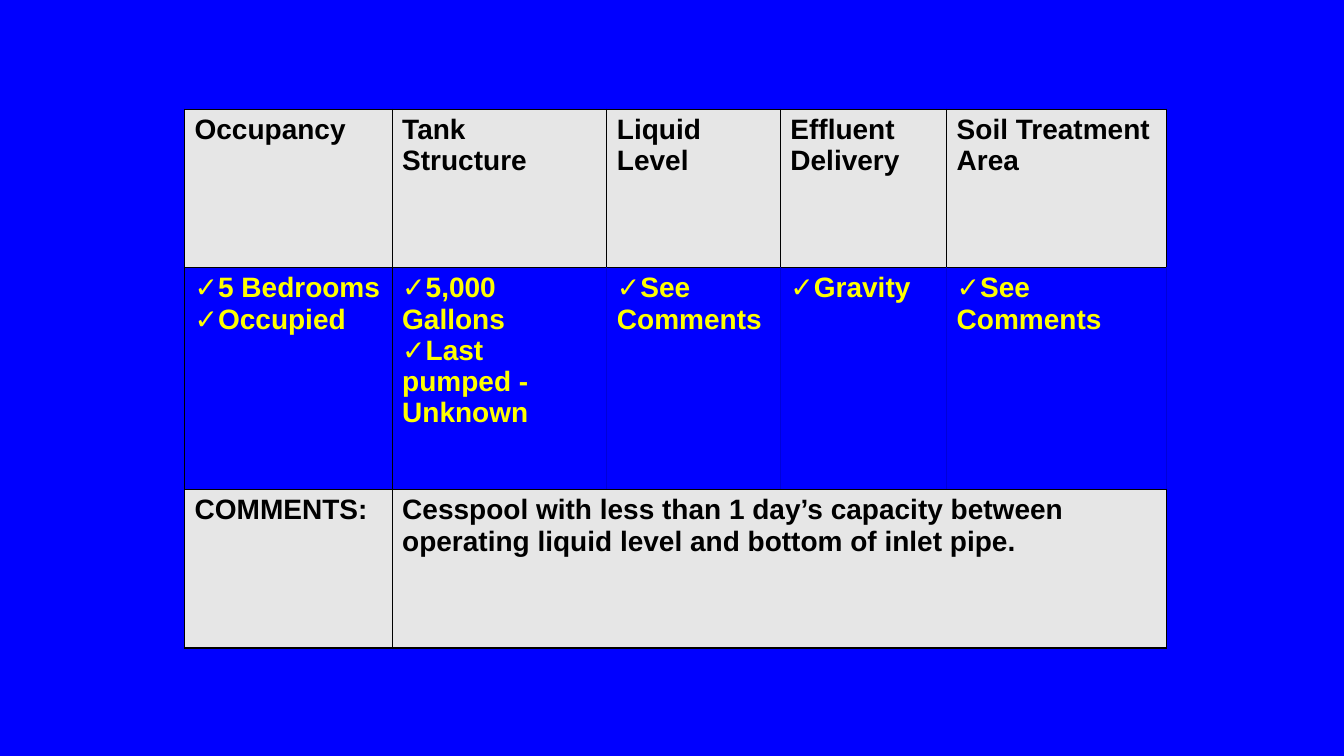
from lxml.etree import SubElement
from pptx import Presentation
from pptx.dml.color import RGBColor
from pptx.oxml.ns import qn
from pptx.util import Cm, Pt

COLORS = {"blue": "0000FF", "gray": "E6E6E6", "yellow": "FFFF00",
          "black": "000000", "faint": "0000D8"}
COLUMN_WIDTHS = [5.23, 5.41, 4.37, 4.19, 5.54]
ROW_HEIGHTS = [3.99, 5.59, 3.99]
FINDINGS_ROW = 1
INSPECTION = [
    [["Occupancy"], ["Tank Structure"], ["Liquid Level"],
     ["Effluent Delivery"], ["Soil Treatment Area"]],
    [["5 Bedrooms", "Occupied"], ["5,000 Gallons", "Last pumped - Unknown"],
     ["See Comments"], ["Gravity"], ["See Comments"]],
    [["COMMENTS:"],
     ["Cesspool with less than 1 day’s capacity between operating liquid "
      "level and bottom of inlet pipe."]],
]


def rgb(name):
    return RGBColor.from_string(COLORS[name])


def add_check_mark(paragraph):
    properties = paragraph._p.get_or_add_pPr()
    properties.set("marL", "0")
    properties.set("indent", "0")
    SubElement(properties, qn("a:buFont"), typeface="Arial")
    SubElement(properties, qn("a:buChar"), char="✓")
    tabs = SubElement(properties, qn("a:tabLst"))
    SubElement(tabs, qn("a:tab"), pos=str(Cm(0.64)), algn="l")


def set_borders(cell, side_colors):
    properties = cell._tc.get_or_add_tcPr()
    for side, color in side_colors.items():
        border = SubElement(properties, qn(f"a:ln{side}"), w=str(Pt(1)))
        fill = SubElement(border, qn("a:solidFill"))
        SubElement(fill, qn("a:srgbClr"), val=COLORS[color])


def write_cell(cell, entries, is_finding):
    cell.text = "\n".join(entries)
    for paragraph in cell.text_frame.paragraphs:
        if is_finding:
            add_check_mark(paragraph)
        font = paragraph.font
        font.name, font.size, font.bold = "Arial", Pt(20), True
        font.color.rgb = rgb("yellow" if is_finding else "black")


def add_inspection_table(slide, left, top, width, height):
    table = slide.shapes.add_table(len(ROW_HEIGHTS), len(COLUMN_WIDTHS),
                                   left, top, width, height).table
    table.first_row = table.horz_banding = False
    for column, share in zip(table.columns, COLUMN_WIDTHS):
        column.width = int(width * share / sum(COLUMN_WIDTHS))
    for row, share in zip(table.rows, ROW_HEIGHTS):
        row.height = int(height * share / sum(ROW_HEIGHTS))
    table.cell(2, 1).merge(table.cell(2, 4))

    for row_index, row in enumerate(table.rows):
        is_finding = row_index == FINDINGS_ROW
        for column_index, cell in enumerate(row.cells):
            left_color = "faint" if is_finding and column_index > 1 else "black"
            right_color = "faint" if is_finding and column_index > 0 else "black"
            set_borders(cell, {"L": left_color, "R": right_color,
                               "T": "black", "B": "black"})
            if is_finding:
                cell.fill.background()
            else:
                cell.fill.solid()
                cell.fill.fore_color.rgb = rgb("gray")
        for cell, entries in zip(row.cells, INSPECTION[row_index]):
            write_cell(cell, entries, is_finding)


def main():
    presentation = Presentation()
    presentation.slide_width = Cm(33.87)
    presentation.slide_height = Cm(19.05)
    slide = presentation.slides.add_slide(presentation.slide_layouts[6])
    slide.background.fill.solid()
    slide.background.fill.fore_color.rgb = rgb("blue")
    add_inspection_table(slide, Cm(4.65), Cm(2.75), Cm(24.75), Cm(13.58))
    presentation.save("out.pptx")


if __name__ == "__main__":
    main()
